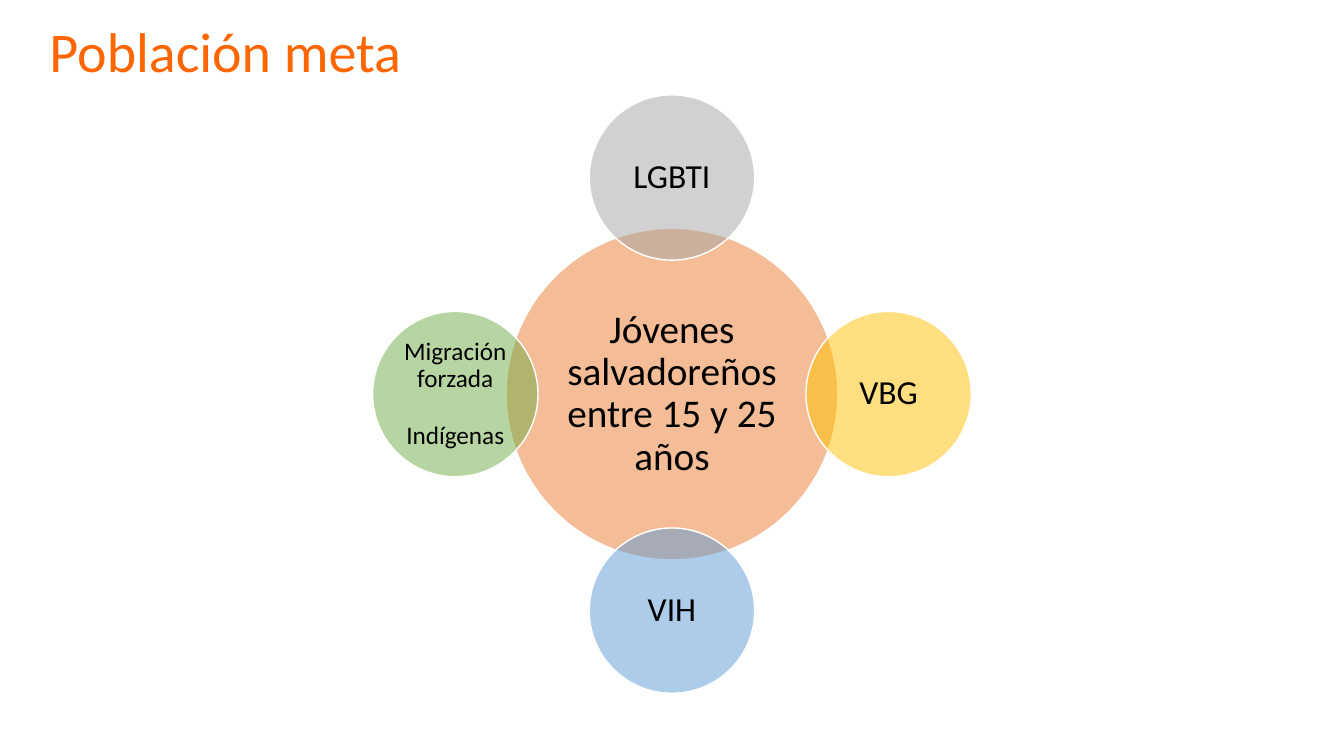
from dataclasses import dataclass

from lxml import etree
from pptx import Presentation
from pptx.dml.color import RGBColor
from pptx.enum.shapes import MSO_SHAPE
from pptx.enum.text import MSO_ANCHOR, MSO_AUTO_SIZE, PP_ALIGN
from pptx.oxml.ns import qn
from pptx.slide import Slide
from pptx.util import Inches, Pt

OVAL = MSO_SHAPE.OVAL
MIDDLE = MSO_ANCHOR.MIDDLE
CENTER, LEFT = PP_ALIGN.CENTER, PP_ALIGN.LEFT
NO_AUTOFIT = MSO_AUTO_SIZE.NONE

SLIDE_W, SLIDE_H = Inches(13.33), Inches(7.5)
TITLE_ONLY = 5


@dataclass(frozen=True)
class Theme:
    font: str = "Calibri"
    title: str = "FF6600"
    text: str = "000000"
    outline: str = "FFFFFF"
    orange: str = "ED7D31"
    gray: str = "A5A5A5"
    gold: str = "FFC000"
    blue: str = "5B9BD5"
    green: str = "70AD47"
    opacity: int = 50
    title_size: int = 40
    hub_size: int = 28
    label_size: int = 24
    small_size: int = 18


@dataclass(frozen=True)
class Circle:
    text: str
    color: str
    size: int
    diameter: float
    dx: int = 0  # steps of one orbit from the hub
    dy: int = 0


THEME = Theme()

# Shares of the slide's size, in percent
CENTER_X, CENTER_Y = 50, 52.13
HUB, SATELLITE, ORBIT = 43.87, 21.87, 28.65

CIRCLES = [
    Circle("Jóvenes salvadoreños entre 15 y 25 años", THEME.orange, THEME.hub_size, HUB),
    Circle("LGBTI", THEME.gray, THEME.label_size, SATELLITE, dy=-1),
    Circle("VBG", THEME.gold, THEME.label_size, SATELLITE, dx=1),
    Circle("VIH", THEME.blue, THEME.label_size, SATELLITE, dy=1),
    Circle("Migración forzada\nIndígenas", THEME.green, THEME.small_size, SATELLITE, dx=-1),
]


def share_w(percent: float) -> int:
    return int(SLIDE_W * percent / 100)


def share_h(percent: float) -> int:
    return int(SLIDE_H * percent / 100)


def format_runs(tf, size: int, color: str) -> None:
    for p in tf.paragraphs:
        for r in p.runs:
            r.font.name = THEME.font
            r.font.size = Pt(size)
            r.font.color.rgb = RGBColor.from_string(color)


def add_title(slide: Slide, text: str) -> None:
    sp = slide.shapes.title
    sp.left, sp.top = share_w(2.93), share_h(1.47)
    sp.width, sp.height = share_w(45.69), share_h(10.27)
    tf = sp.text_frame
    tf.text = text
    tf.auto_size = NO_AUTOFIT
    tf.vertical_anchor = MIDDLE
    tf.paragraphs[0].alignment = LEFT
    format_runs(tf, THEME.title_size, THEME.title)


def add_circle(slide: Slide, circle: Circle) -> None:
    d = share_h(circle.diameter)
    x = share_w(CENTER_X) + circle.dx * share_h(ORBIT)
    y = share_h(CENTER_Y) + circle.dy * share_h(ORBIT)
    sp = slide.shapes.add_shape(OVAL, x - d // 2, y - d // 2, d, d)
    sp.shadow.inherit = False

    # Translucent fill with a thin outline
    sp.fill.solid()
    sp.fill.fore_color.rgb = RGBColor.from_string(circle.color)
    clr = sp.fill._xPr.find(".//" + qn("a:srgbClr"))
    etree.SubElement(clr, qn("a:alpha"), val=str(THEME.opacity * 1000))
    sp.line.color.rgb = RGBColor.from_string(THEME.outline)
    sp.line.width = Pt(1)

    # Label
    tf = sp.text_frame
    tf.text = circle.text
    tf.word_wrap = True
    tf.vertical_anchor = MIDDLE
    tf.margin_left = tf.margin_right = tf.margin_top = tf.margin_bottom = Inches(0.03)
    for i, p in enumerate(tf.paragraphs):
        p.alignment = CENTER
        p.line_spacing = 0.9
        p.space_before = Pt(21 if i else 0)
    format_runs(tf, circle.size, THEME.text)


def main() -> None:
    prs = Presentation()
    prs.slide_width, prs.slide_height = SLIDE_W, SLIDE_H
    slide = prs.slides.add_slide(prs.slide_layouts[TITLE_ONLY])
    add_title(slide, "Población meta")
    for circle in CIRCLES:
        add_circle(slide, circle)
    prs.save("out.pptx")


if __name__ == "__main__":
    main()
